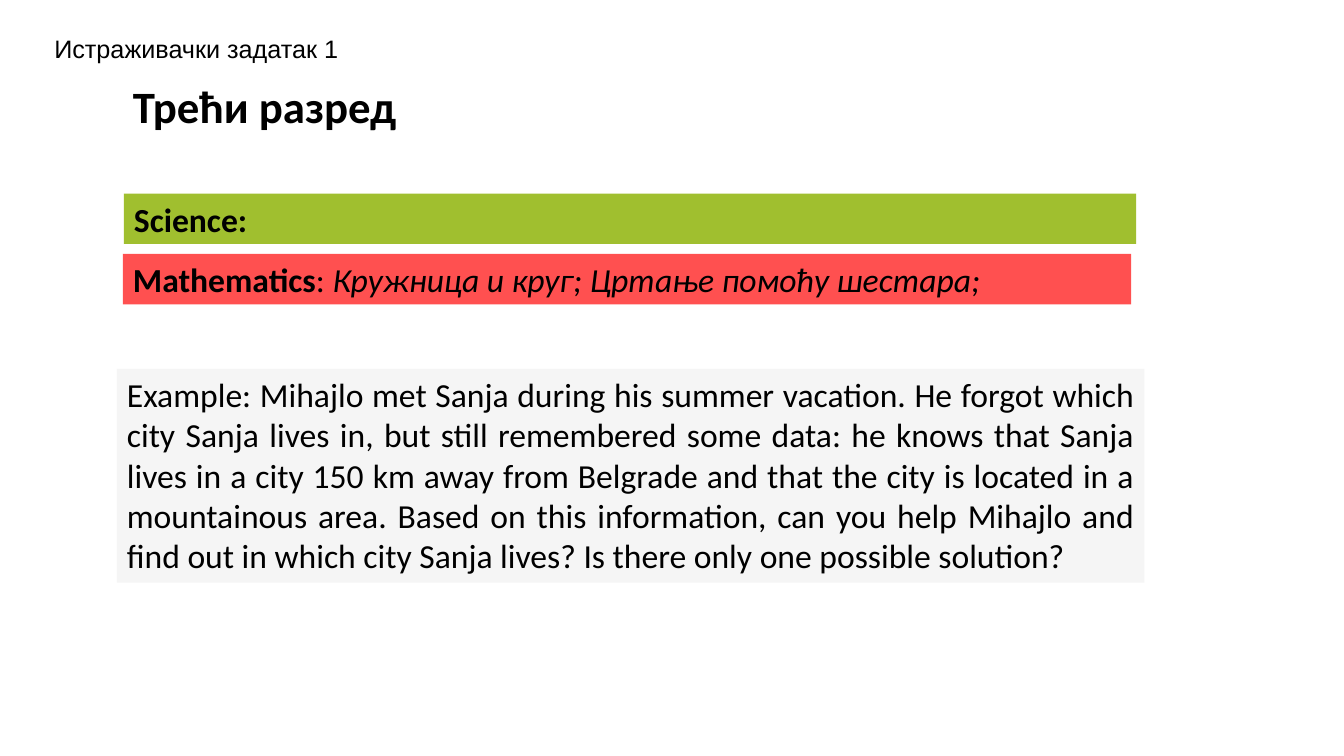
from dataclasses import dataclass

from pptx import Presentation
from pptx.dml.color import RGBColor
from pptx.enum.shapes import MSO_SHAPE
from pptx.enum.text import MSO_ANCHOR, PP_ALIGN
from pptx.util import Inches, Pt

RECT = MSO_SHAPE.RECTANGLE
TOP = MSO_ANCHOR.TOP
LEFT, JUSTIFY = PP_ALIGN.LEFT, PP_ALIGN.JUSTIFY


@dataclass(frozen=True)
class Theme:
    """Colours, fonts and type sizes of the slide."""
    text: str = "000000"
    science: str = "A0BF2F"
    mathematics: str = "FF5050"
    example: str = "F5F5F5"
    body_font: str = "Calibri"
    label_font: str = "Arial"
    title_size: int = 32
    body_size: int = 24
    label_size: int = 18


THEME = Theme()


def style_run(r, size, font=THEME.body_font, bold=False, italic=False):
    """Set the type of one run."""
    r.font.name = font
    r.font.size = Pt(size)
    r.font.bold = bold
    r.font.italic = italic
    r.font.color.rgb = RGBColor.from_string(THEME.text)


def add_label(s, box, text, size, font=THEME.body_font, bold=False, spacing=1.0):
    """Add a plain line of text."""
    tf = s.shapes.add_textbox(*map(Inches, box)).text_frame
    tf.word_wrap = True
    tf.text = text
    p = tf.paragraphs[0]
    p.line_spacing = spacing
    style_run(p.runs[0], size, font, bold)


def add_panel(s, box, color, parts, align=LEFT):
    """Add a filled rectangle holding (text, bold, italic) parts."""
    sp = s.shapes.add_shape(RECT, *map(Inches, box))
    sp.shadow.inherit = False
    sp.fill.solid()
    sp.fill.fore_color.rgb = RGBColor.from_string(color)
    sp.line.fill.background()
    tf = sp.text_frame
    tf.word_wrap = True
    tf.vertical_anchor = TOP
    p = tf.paragraphs[0]
    p.alignment = align
    for text, bold, italic in parts:
        r = p.add_run()
        r.text = text
        style_run(r, THEME.body_size, bold=bold, italic=italic)


def main():
    """Build the slide and save it."""
    prs = Presentation()
    prs.slide_width, prs.slide_height = Inches(13.33), Inches(7.5)
    s = prs.slides.add_slide(prs.slide_layouts[6])

    add_label(s, (1.22, 0.79, 6.09, 0.84), "Трећи разред",
              THEME.title_size, bold=True, spacing=0.9)
    add_panel(s, (1.22, 2.52, 10, 0.5), THEME.mathematics, [
        ("Mathematics", True, False),
        (": ", False, False),
        ("Кружница и круг; Цртање помоћу шестара;", False, True),
    ])
    add_panel(s, (1.23, 1.92, 10.04, 0.5), THEME.science,
              [("Science:", True, False)])
    example = (
        "Example: Mihajlo met Sanja during his summer vacation. He forgot "
        "which city Sanja lives in, but still remembered some data: he knows "
        "that Sanja lives in a city 150 km away from Belgrade and that the "
        "city is located in a mountainous area. Based on this information, "
        "can you help Mihajlo and find out in which city Sanja lives? Is "
        "there only one possible solution?"
    )
    add_panel(s, (1.16, 3.66, 10.19, 2.12), THEME.example,
              [(example, False, False)], JUSTIFY)
    add_label(s, (0.44, 0.28, 5.66, 0.4), "Истраживачки задатак 1",
              THEME.label_size, THEME.label_font)

    prs.save("out.pptx")


if __name__ == "__main__":
    main()
